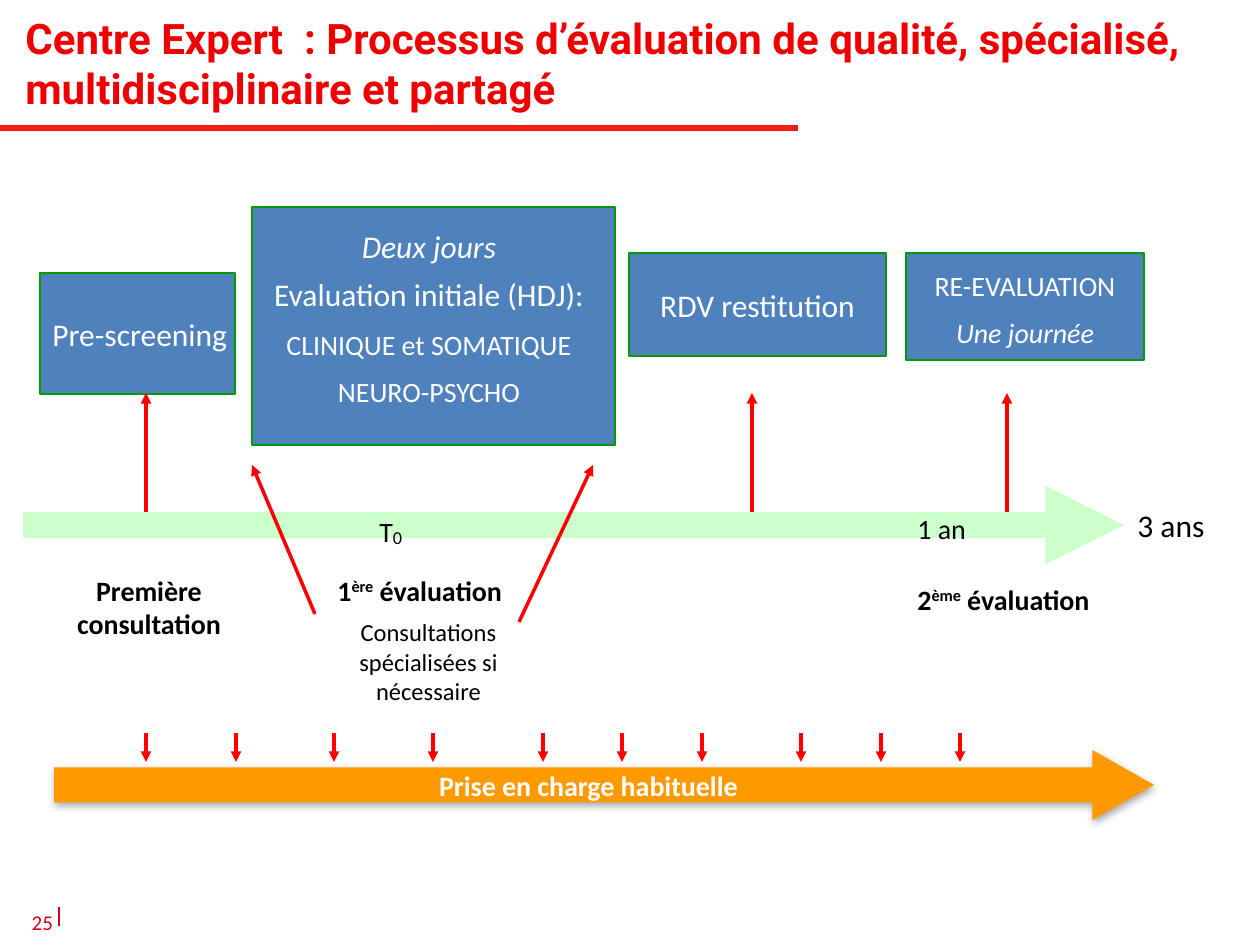
from pptx import Presentation
from pptx.dml.color import RGBColor
from pptx.enum.shapes import MSO_CONNECTOR as CONN, MSO_SHAPE as SHAPE
from pptx.enum.text import MSO_ANCHOR as ANCHOR, PP_ALIGN as ALIGN
from pptx.oxml.ns import qn
from pptx.util import Pt
from lxml.etree import SubElement

PX = 914400 / 126
RED = RGBColor(0xFF, 0x00, 0x00)
TITLE_RED = RGBColor(0xEE, 0x00, 0x00)
RULE_RED = RGBColor(0xF4, 0x1C, 0x14)
NUMBER_RED = RGBColor(0xCF, 0x00, 0x1B)
BLUE = RGBColor(0x4F, 0x81, 0xBD)
GREEN = RGBColor(0x00, 0x99, 0x00)
PALE_GREEN = RGBColor(0xCC, 0xFF, 0xCC)
ORANGE = RGBColor(0xFF, 0x99, 0x00)
WHITE = RGBColor(0xFF, 0xFF, 0xFF)
BLACK = RGBColor(0x00, 0x00, 0x00)

prs = Presentation()
prs.slide_width, prs.slide_height = round(1260 * PX), round(945 * PX)
s = prs.slides.add_slide(prs.slide_layouts[6])


def add_line(x1, y1, x2, y2, color=RED, width=2, arrow=True):
    c = s.shapes.add_connector(CONN.STRAIGHT, *(round(v * PX) for v in (x1, y1, x2, y2)))
    c.line.color.rgb = color
    c.line.width = Pt(width)
    if arrow:
        SubElement(c.line._get_or_add_ln(), qn("a:tailEnd"), type="triangle")
    SubElement(c._element.spPr, qn("a:effectLst"))


def write(sp, paragraphs, color=BLACK, align=ALIGN.LEFT, anchor=ANCHOR.TOP,
          wrap=True, bold=False, font="Calibri"):
    tf = sp.text_frame
    tf.word_wrap = wrap
    tf.vertical_anchor = anchor
    for i, (before, size, italic, runs) in enumerate(paragraphs):
        p = tf.add_paragraph() if i else tf.paragraphs[0]
        p.alignment = align
        if before:
            p.space_before = Pt(before)
        for text, baseline in runs:
            r = p.add_run()
            r.text = text
            r.font.name = font
            r.font.size = Pt(18 if baseline < 0 else size)
            r.font.bold = bold
            r.font.italic = italic
            r.font.color.rgb = color
            if baseline:
                r.font._element.set("baseline", str(baseline * 1000))
    return tf


add_line(0, 128, 798, 128, RULE_RED, 3, False)
add_line(59, 907, 59, 926, NUMBER_RED, 1, False)

number = s.shapes.add_textbox(0, round(910 * PX), round(53 * PX), round(25 * PX))
tf = write(number, [(0, 12, False, [("25", 0)])], NUMBER_RED, ALIGN.RIGHT, ANCHOR.MIDDLE)
tf.margin_left = tf.margin_top = tf.margin_right = tf.margin_bottom = 0

title = s.shapes.add_textbox(0, 0, round(1260 * PX), round(125 * PX))
heading = "Centre Expert  : Processus d’évaluation de qualité, spécialisé, multidisciplinaire et partagé"
tf = write(title, [(0, 24, False, [(heading, 0)])], TITLE_RED, anchor=ANCHOR.MIDDLE,
           bold=True, font="Roboto")
tf.paragraphs[0]._p.get_or_add_pPr().set("marL", str(round(13 * PX)))

steps = [
    ((40, 273, 195, 121), "Pre-screening", ALIGN.LEFT),
    ((252, 207, 363, 238), None, None),
    ((906, 253, 238, 107), None, None),
    ((629, 253, 257, 103), "RDV restitution", ALIGN.CENTER),
]
for box, label, align in steps:
    sp = s.shapes.add_shape(SHAPE.RECTANGLE, *(round(v * PX) for v in box))
    sp.shadow.inherit = False
    sp.fill.solid()
    sp.fill.fore_color.rgb = BLUE
    sp.line.color.rgb = GREEN
    sp.line.width = Pt(0.75)
    if label:
        write(sp, [(0, 18, False, [(label, 0)])], WHITE, align, ANCHOR.MIDDLE, False)

add_line(23, 525, 1124, 525, PALE_GREEN, 15)
for x in (146, 752, 1007):
    add_line(x, 512, x, 393)
add_line(315, 614, 252, 465)
add_line(519, 622, 593, 465)
for x in (146, 236, 334, 433, 543, 622, 702, 801, 881, 960):
    add_line(x, 733, x, 762)

labels = [
    ((50, 567, 198, 81), BLACK, ALIGN.CENTER, True, True,
     [(0, 16, False, [("Première consultation", 0)])]),
    ((329, 611, 199, 102), BLACK, ALIGN.CENTER, True, False,
     [(0, 14, False, [("Consultations", 0)]),
      (0, 14, False, [("spécialisées si nécessaire", 0)])]),
    ((905, 505, 159, 47), BLACK, ALIGN.LEFT, True, False, [(0, 16, False, [("1 an", 0)])]),
    ((325, 567, 221, 47), BLACK, ALIGN.LEFT, True, True,
     [(0, 16, False, [("1", 0), ("ère", 30), (" évaluation", 0)])]),
    ((906, 262, 238, 97), WHITE, ALIGN.CENTER, True, False,
     [(0, 16, False, [("RE-EVALUATION", 0)]), (8, 16, True, [("Une journée", 0)])]),
    ((242, 221, 374, 202), WHITE, ALIGN.CENTER, True, False,
     [(0, 18, True, [("Deux jours", 0)]),
      (6, 18, False, [("Evaluation initiale (HDJ):", 0)]),
      (8, 16, False, [("CLINIQUE et SOMATIQUE", 0)]),
      (8, 16, False, [("NEURO-PSYCHO", 0)])]),
    ((905, 576, 204, 47), BLACK, ALIGN.LEFT, False, True,
     [(0, 16, False, [("2", 0), ("ème", 30), (" évaluation", 0)])]),
    ((367, 505, 86, 47), BLACK, ALIGN.LEFT, True, False,
     [(0, 16, False, [("T", 0), ("0", -6)])]),
    ((1125, 500, 116, 52), BLACK, ALIGN.LEFT, True, False, [(0, 18, False, [("3 ans", 0)])]),
]
for box, color, align, wrap, bold, paragraphs in labels:
    sp = s.shapes.add_textbox(*(round(v * PX) for v in box))
    write(sp, paragraphs, color, align, wrap=wrap, bold=bold)

care = s.shapes.add_shape(SHAPE.RIGHT_ARROW, *(round(v * PX) for v in (54, 750, 1100, 70)))
care.adjustments[0], care.adjustments[1] = 0.5, 0.88
care.fill.solid()
care.fill.fore_color.rgb = ORANGE
care.line.fill.background()
care.shadow.inherit = False
effects = care._element.spPr.find(qn("a:effectLst"))
shadow = SubElement(effects, qn("a:outerShdw"), blurRad=str(Pt(5)), dist=str(Pt(1.8)),
                    dir="5400000", rotWithShape="0")
shade = SubElement(shadow, qn("a:srgbClr"), val="000000")
SubElement(shade, qn("a:alpha"), val="35000")
write(care, [(0, 16, False, [("Prise en charge habituelle", 0)])], WHITE, ALIGN.CENTER,
      ANCHOR.MIDDLE, bold=True)

prs.save("out.pptx")
